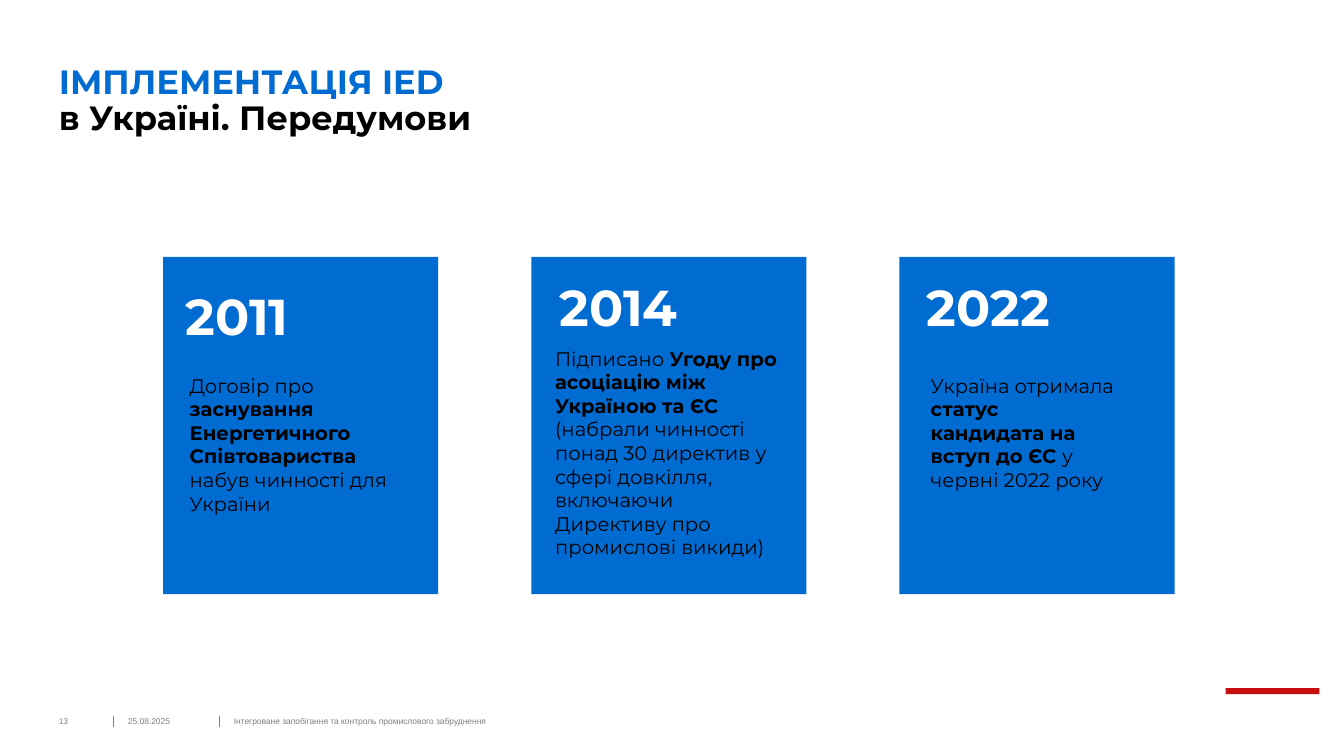
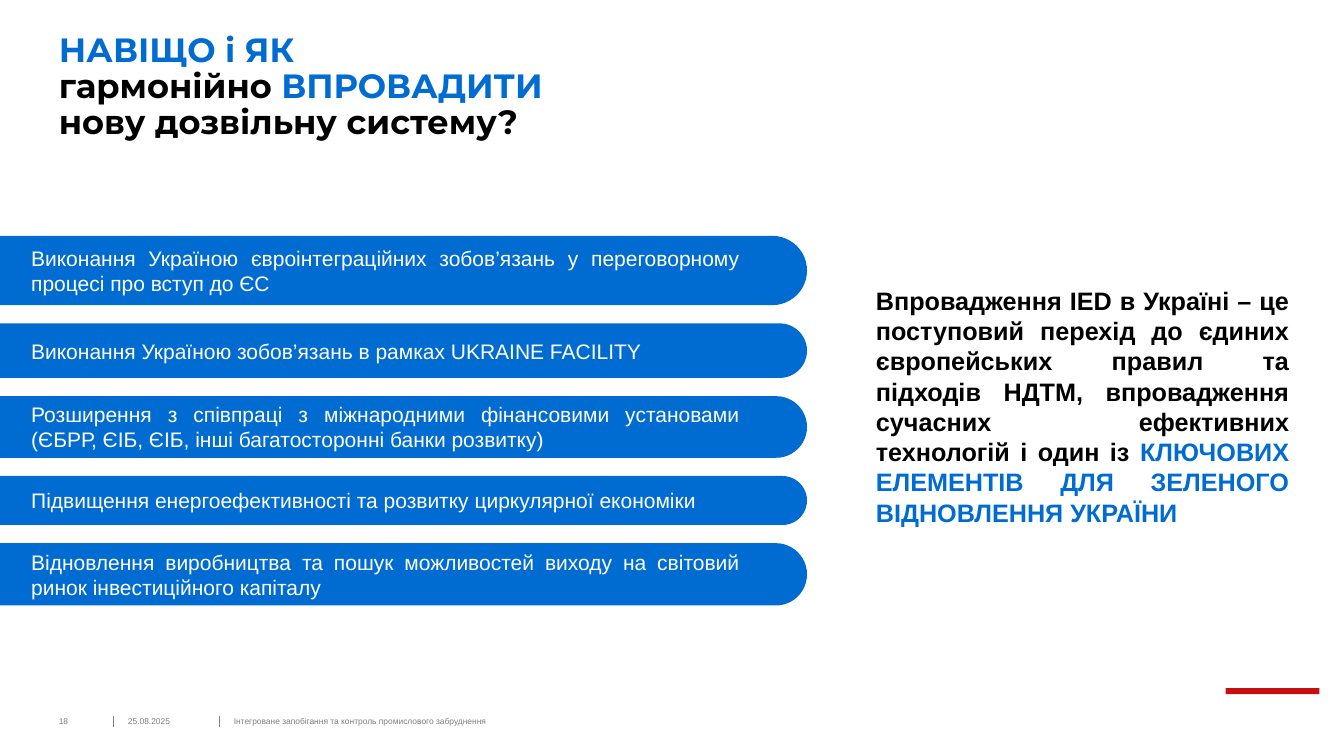
import pptx
import pptx.dml.color
import pptx.enum.shapes
import pptx.enum.text
import pptx.oxml
import pptx.util

Pt = pptx.util.Pt
SHAPES = pptx.enum.shapes.MSO_SHAPE
ANCHOR = pptx.enum.text.MSO_ANCHOR
ALIGN = pptx.enum.text.PP_ALIGN

COLORS = {
    "blue": "006CD2",
    "red": "C80F0F",
    "gray": "7F7F7F",
    "black": "000000",
    "white": "FFFFFF",
}

STYLES = {
    "title": {"name": "Montserrat", "size": Pt(24), "bold": True},
    "year": {"name": "Montserrat", "size": Pt(36), "bold": True},
    "event": {"name": "Montserrat", "size": Pt(14), "bold": False},
    "event bold": {"name": "Montserrat", "size": Pt(14), "bold": True},
    "reason": {"name": "Arial", "size": Pt(15), "bold": False},
    "summary": {"name": "Arial", "size": Pt(18), "bold": True},
    "footer": {"name": "Arial", "size": Pt(6), "bold": False},
}

MARGIN = 42
FOOTER_TOP = 511.2
DATE = "25.08.2025"
FOOTER = "Інтегроване запобігання та контроль промислового забруднення"

CARD_LEFT, CARD_TOP, CARD_PITCH = 116.5, 183.5, 263
CARD_WIDTH, CARD_HEIGHT = 196.5, 241

# Year, its offset in the card, description offset, description width, runs
EVENTS = [
    ("2011", (16, 20.3), (19, 83.5), 158.5, [
        ("Договір про ", "event"),
        ("заснування Енергетичного Співтовариства ", "event bold"),
        ("набув чинності для України", "event"),
    ]),
    ("2014", (20, 13.8), (17, 64.2), 158.5, [
        ("Підписано ", "event"),
        ("Угоду про асоціацію між Україною та ЄС ", "event bold"),
        ("(набрали чинності понад 30 директив у сфері довкілля, включаючи "
         "Директиву про промислові викиди)", "event"),
    ]),
    ("2022", (19.5, 13.8), (22.3, 83.5), 133.2, [
        ("Україна отримала ", "event"),
        ("статус кандидата на вступ до ЄС ", "event bold"),
        ("у червні 2022 року", "event"),
    ]),
]

BAR_LEFT, BAR_TOP, BAR_WIDTH, BAR_GAP = -27, 168.5, 603.5, 13
REASON_LEFT, REASON_WIDTH = 22.3, 506.2

# Bar height, text
REASONS = [
    (49.5, "Виконання Україною євроінтеграційних зобов’язань у переговорному "
           "процесі про вступ до ЄС"),
    (39, "Виконання Україною зобов’язань в рамках UKRAINE FACILITY"),
    (44, "Розширення з співпраці з міжнародними фінансовими установами "
         "(ЄБРР, ЄІБ, ЄІБ, інші багатосторонні банки розвитку)"),
    (35, "Підвищення енергоефективності та розвитку циркулярної економіки"),
    (44.5, "Відновлення виробництва та пошук можливостей виходу на світовий "
           "ринок інвестиційного капіталу"),
]


def rgb(color):
    return pptx.dml.color.RGBColor.from_string(COLORS[color])


def set_attributes(target, values):
    for name, value in values.items():
        setattr(target, name, value)


def add_block(slide, left, top, width, height, color, kind=SHAPES.RECTANGLE):
    """Add a filled preset shape without outline or shadow."""
    shape = slide.shapes.add_shape(kind, Pt(left), Pt(top), Pt(width), Pt(height))
    shape.shadow.inherit = False
    shape.fill.solid()
    shape.fill.fore_color.rgb = rgb(color)
    shape.line.fill.background()
    return shape


def add_text(slide, left, top, width, height, lines,
             anchor=ANCHOR.TOP, alignment=ALIGN.LEFT, line_spacing=None):
    """Add one paragraph; each line is a list of (text, style, color) runs."""
    shape = slide.shapes.add_textbox(Pt(left), Pt(top), Pt(width), Pt(height))
    set_attributes(shape.text_frame, {
        "word_wrap": True,
        "vertical_anchor": anchor,
        "margin_left": 0,
        "margin_top": 0,
        "margin_right": 0,
        "margin_bottom": 0,
    })
    paragraph = shape.text_frame.paragraphs[0]
    set_attributes(paragraph, {"alignment": alignment, "line_spacing": line_spacing})
    for index, line in enumerate(lines):
        if index:
            paragraph.add_line_break()
        for text, style, color in line:
            run = paragraph.add_run()
            run.text = text
            set_attributes(run.font, STYLES[style])
            run.font.color.rgb = rgb(color)


def add_separator(slide, x):
    connector = slide.shapes.add_connector(
        pptx.enum.shapes.MSO_CONNECTOR.STRAIGHT,
        Pt(x), Pt(FOOTER_TOP), Pt(x), Pt(FOOTER_TOP + 8))
    connector.line.color.rgb = rgb("gray")
    connector.line.width = Pt(0.75)
    properties = connector._element.spPr
    properties.append(pptx.oxml.parse_xml(
        '<a:effectLst xmlns:a="http://schemas.openxmlformats.org/drawingml/2006/main"/>'))


def add_title(slide, bottom, lines):
    height = 84
    add_text(slide, MARGIN, bottom - height, 633, height,
             [[(text, "title", color) for text, color in line] for line in lines],
             anchor=ANCHOR.BOTTOM, line_spacing=0.9)


def add_footer(slide, number):
    for x in (81.4, 157):
        add_separator(slide, x)
    add_block(slide, 875.5, 491.5, 67, 4.3, "red")
    for left, width, text in ((MARGIN, 37, number), (91.4, 57, DATE), (167, 539, FOOTER)):
        add_text(slide, left, FOOTER_TOP, width, 7.2, [[(text, "footer", "gray")]],
                 anchor=ANCHOR.MIDDLE)


def add_slide(presentation, number, title_bottom, title_lines):
    slide = presentation.slides.add_slide(presentation.slide_layouts[6])
    add_title(slide, title_bottom, title_lines)
    add_footer(slide, number)
    return slide


def add_event_card(slide, index, event):
    year, (year_x, year_y), (text_x, text_y), text_width, runs = event
    left = CARD_LEFT + index * CARD_PITCH
    add_block(slide, left, CARD_TOP, CARD_WIDTH, CARD_HEIGHT, "blue")
    add_text(slide, left + year_x, CARD_TOP + year_y, CARD_WIDTH - year_x, 44,
             [[(year, "year", "white")]])
    add_text(slide, left + text_x, CARD_TOP + text_y, text_width,
             CARD_HEIGHT - text_y, [[(text, style, "black") for text, style in runs]])


def add_reason_bars(slide):
    top = BAR_TOP
    for height, text in REASONS:
        bar = add_block(slide, BAR_LEFT, top, BAR_WIDTH, height, "blue",
                        SHAPES.ROUNDED_RECTANGLE)
        bar.adjustments[0] = 0.5
        add_text(slide, REASON_LEFT, top, REASON_WIDTH, height,
                 [[(text, "reason", "white")]],
                 anchor=ANCHOR.MIDDLE, alignment=ALIGN.JUSTIFY)
        top += height + BAR_GAP


def build_background_slide(presentation):
    slide = add_slide(presentation, "13", 98.6, [
        [("ІМПЛЕМЕНТАЦІЯ IED", "blue")],
        [("в Україні. Передумови", "black")],
    ])
    for index, event in enumerate(EVENTS):
        add_event_card(slide, index, event)


def build_reasons_slide(presentation):
    slide = add_slide(presentation, "18", 101.5, [
        [("НАВІЩО і ЯК", "blue")],
        [("гармонійно ", "black"), ("ВПРОВАДИТИ", "blue")],
        [("нову дозвільну систему?", "black")],
    ])
    add_reason_bars(slide)
    add_text(slide, 625.7, 203.8, 295.2, 174, [[
        ("Впровадження IED в Україні – це поступовий перехід до єдиних "
         "європейських правил та підходів НДТМ, впровадження сучасних "
         "ефективних технологій і один із ", "summary", "black"),
        ("КЛЮЧОВИХ ЕЛЕМЕНТІВ ДЛЯ ЗЕЛЕНОГО ВІДНОВЛЕННЯ УКРАЇНИ", "summary", "blue"),
    ]], alignment=ALIGN.JUSTIFY)


def main():
    presentation = pptx.Presentation()
    set_attributes(presentation, {"slide_width": Pt(960), "slide_height": Pt(540)})
    build_background_slide(presentation)
    build_reasons_slide(presentation)
    presentation.save("out.pptx")


if __name__ == "__main__":
    main()
